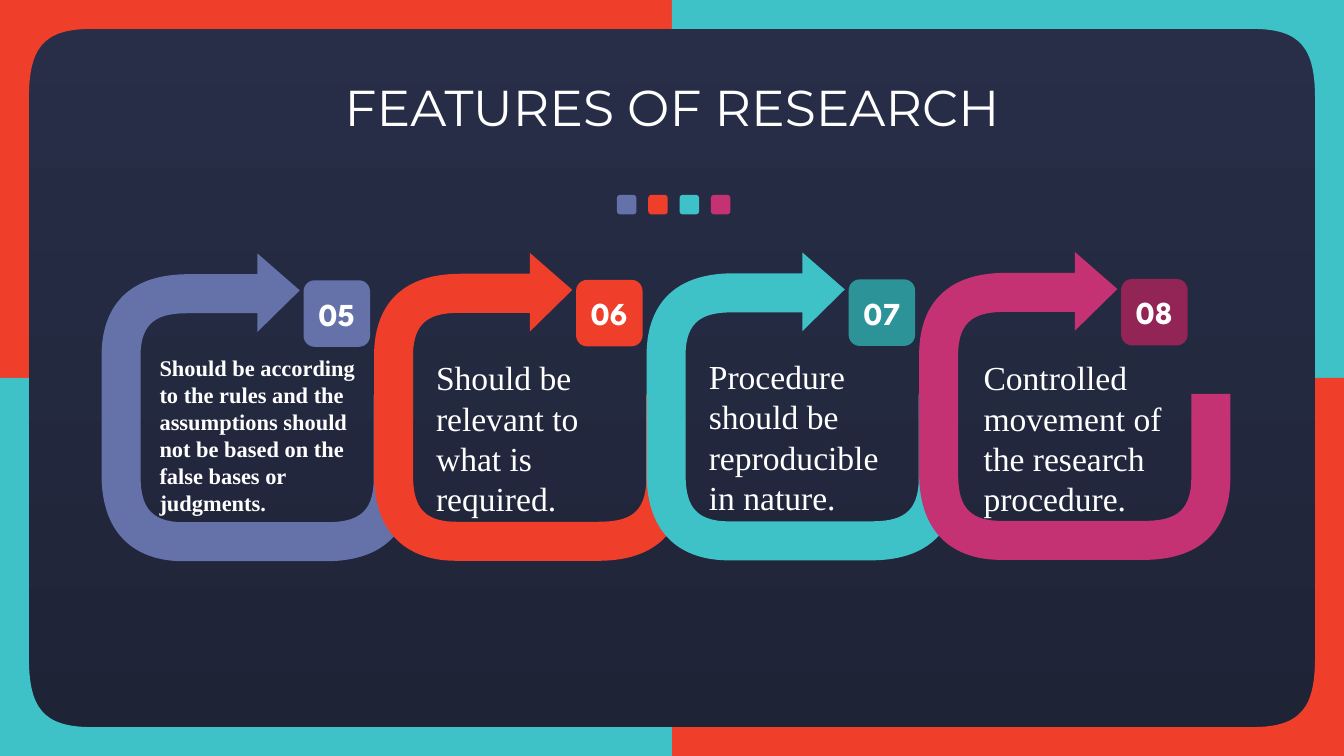
from lxml import etree
from pptx import Presentation
from pptx.dml.color import RGBColor
from pptx.enum.shapes import MSO_SHAPE
from pptx.enum.text import MSO_ANCHOR, MSO_AUTO_SIZE, PP_ALIGN
from pptx.oxml.ns import qn
from pptx.util import Pt

ROUNDED = MSO_SHAPE.ROUNDED_RECTANGLE
MIDDLE, TOP = MSO_ANCHOR.MIDDLE, MSO_ANCHOR.TOP
LEFT, CENTER = PP_ALIGN.LEFT, PP_ALIGN.CENTER
GROW = MSO_AUTO_SIZE.SHAPE_TO_FIT_TEXT

WHITE = RGBColor(0xFF, 0xFF, 0xFF)
NAVY_TOP = RGBColor(0x28, 0x2E, 0x48)
NAVY_BOTTOM = RGBColor(0x1E, 0x23, 0x36)
PERIWINKLE = RGBColor(0x65, 0x72, 0xAA)
RED = RGBColor(0xEF, 0x3E, 0x2A)
TURQUOISE = RGBColor(0x3E, 0xC2, 0xC7)
DARK_TURQUOISE = RGBColor(0x2C, 0x94, 0x98)
MAGENTA = RGBColor(0xC4, 0x32, 0x73)
DARK_MAGENTA = RGBColor(0x93, 0x25, 0x56)

WIDTH, HEIGHT = 1440, 810
ARROW_LEFT, ARROW_TOP = 108.8, 271.5
ARROW_PITCH, ARROW_RISE = 292, 0.48
BADGE_SIZE = 71.3
DOT_LEFT, DOT_TOP, DOT_PITCH, DOT_SIZE = 661, 208.8, 33.55, 20.9

ARROW_OUTLINE = [
    [(167, 64.1)],
    [(92.9, 64.1)],
    [(62.6, 64.1), (41.8, 71.3), (41.8, 110.2)],
    [(41.8, 236.9)],
    [(41.8, 267.1), (49, 288), (87.8, 288)],
    [(240.5, 288)],
    [(270.7, 288), (291.6, 280.8), (291.6, 241.9)],
    [(291.6, 151.9)],
    [(333.4, 151.9)],
    [(333.4, 241.9)],
    [(333.4, 290.9), (308.2, 329.8), (240.5, 329.8)],
    [(87.8, 329.8)],
    [(38.9, 329.8), (0, 303.8), (0, 236.9)],
    [(0, 110.2)],
    [(0, 60.5), (25.2, 22.3), (92.9, 22.3)],
    [(167, 22.3)],
    [(167, 0)],
    [(212.4, 39.6)],
    [(167, 84.2)],
]
CORNER_OUTLINE = [
    [(0, 405)],
    [(0, 0)],
    [(720, 0)],
    [(720, 31)],
    [(97.9, 31)],
    [(46.1, 31), (31, 51.8), (31, 105.8)],
    [(31, 405)],
]

STEPS = [
    ("05", PERIWINKLE, PERIWINKLE, 163.9, 376.1, 24, True,
     "Should be according to the rules and the assumptions should "
     "not be based on the false bases or judgments."),
    ("06", RED, RED, 460.1, 379.1, 36, False,
     "Should be relevant to what is required."),
    ("07", TURQUOISE, DARK_TURQUOISE, 752.4, 377.7, 36, False,
     "Procedure should be reproducible in nature."),
    ("08", MAGENTA, DARK_MAGENTA, 1046.7, 379.1, 36, False,
     "Controlled movement of the research procedure."),
]


def paint(shape, color):
    shape.shadow.inherit = False
    shape.fill.solid()
    shape.fill.fore_color.rgb = color
    shape.line.fill.background()


def bend_segments(shape, outline):
    lines = iter(list(shape.element.iter(qn("a:lnTo"))))
    for segment in outline[1:]:
        members = [next(lines) for _ in segment]
        if len(members) == 3:
            curve = etree.Element(qn("a:cubicBezTo"))
            members[0].addprevious(curve)
            for line in members:
                curve.append(line[0])
                line.getparent().remove(line)


def add_outline(shapes, outline, place, color):
    vertices = []
    for segment in outline:
        for point in segment:
            x, y = place(*point)
            vertices.append((Pt(x), Pt(y)))
    builder = shapes.build_freeform(*vertices[0])
    builder.add_line_segments(vertices[1:], close=True)
    shape = builder.convert_to_shape()
    bend_segments(shape, outline)
    paint(shape, color)


def add_rounded_square(shapes, left, top, size, color):
    shape = shapes.add_shape(ROUNDED, Pt(left), Pt(top), Pt(size), Pt(size))
    paint(shape, color)
    return shape


def write_text(shape, text, *, font, size, bold=False, align=LEFT,
               anchor=TOP, line_spacing=None):
    frame = shape.text_frame
    frame.word_wrap = True
    frame.vertical_anchor = anchor
    paragraph = frame.paragraphs[0]
    paragraph.alignment = align
    if line_spacing:
        paragraph.line_spacing = Pt(line_spacing)
    run = paragraph.add_run()
    run.text = text
    run.font.name = font
    run.font.size = Pt(size)
    run.font.bold = bold
    run.font.color.rgb = WHITE


def add_text_box(slide, left, top, width, height, text, **text_format):
    box = slide.shapes.add_textbox(Pt(left), Pt(top), Pt(width), Pt(height))
    write_text(box, text, **text_format)
    box.text_frame.auto_size = GROW
    return box


def add_arrow_with_badge(slide, index, number, arrow_color, badge_color):
    left = ARROW_LEFT + index * ARROW_PITCH
    top = ARROW_TOP - index * ARROW_RISE
    shapes = slide.shapes.add_group_shape().shapes
    add_outline(shapes, ARROW_OUTLINE,
                lambda x, y: (left + x, top + y), arrow_color)
    badge = add_rounded_square(shapes, left + 216.4, top + 28.8,
                               BADGE_SIZE, badge_color)
    write_text(badge, number, font="League Spartan", size=34.2, bold=True,
               align=CENTER, anchor=MIDDLE)


def add_title(slide):
    title = add_text_box(slide, 305.3, 106.6, 829.4, 44.6,
                         "FEATURES OF RESEARCH", font="Montserrat", size=54,
                         align=CENTER, line_spacing=39.6)
    frame = title.text_frame
    frame.margin_left = frame.margin_right = Pt(0)
    frame.margin_top = frame.margin_bottom = Pt(0)


def add_frame_corner(slide, right, bottom, color):
    def mirror(x, y):
        return WIDTH - x if right else x, HEIGHT - y if bottom else y

    add_outline(slide.shapes, CORNER_OUTLINE, mirror, color)


def set_background(slide):
    fill = slide.background.fill
    fill.gradient()
    fill.gradient_angle = 270
    for stop, color in zip(fill.gradient_stops, (NAVY_TOP, NAVY_BOTTOM)):
        stop.color.rgb = color


def main():
    presentation = Presentation()
    presentation.slide_width = Pt(WIDTH)
    presentation.slide_height = Pt(HEIGHT)
    slide = presentation.slides.add_slide(presentation.slide_layouts[6])
    set_background(slide)
    for index, (number, color, badge_color, *_) in enumerate(STEPS):
        add_arrow_with_badge(slide, index, number, color, badge_color)
    add_title(slide)
    for index, (_, color, _, left, top, size, bold, text) in enumerate(STEPS):
        add_rounded_square(slide.shapes, DOT_LEFT + index * DOT_PITCH,
                           DOT_TOP, DOT_SIZE, color)
        add_text_box(slide, left, top, 228.2, 181.4, text,
                     font="Times New Roman", size=size, bold=bold)
    add_frame_corner(slide, False, False, RED)
    add_frame_corner(slide, True, False, TURQUOISE)
    add_frame_corner(slide, True, True, RED)
    add_frame_corner(slide, False, True, TURQUOISE)
    presentation.save("out.pptx")


if __name__ == "__main__":
    main()
